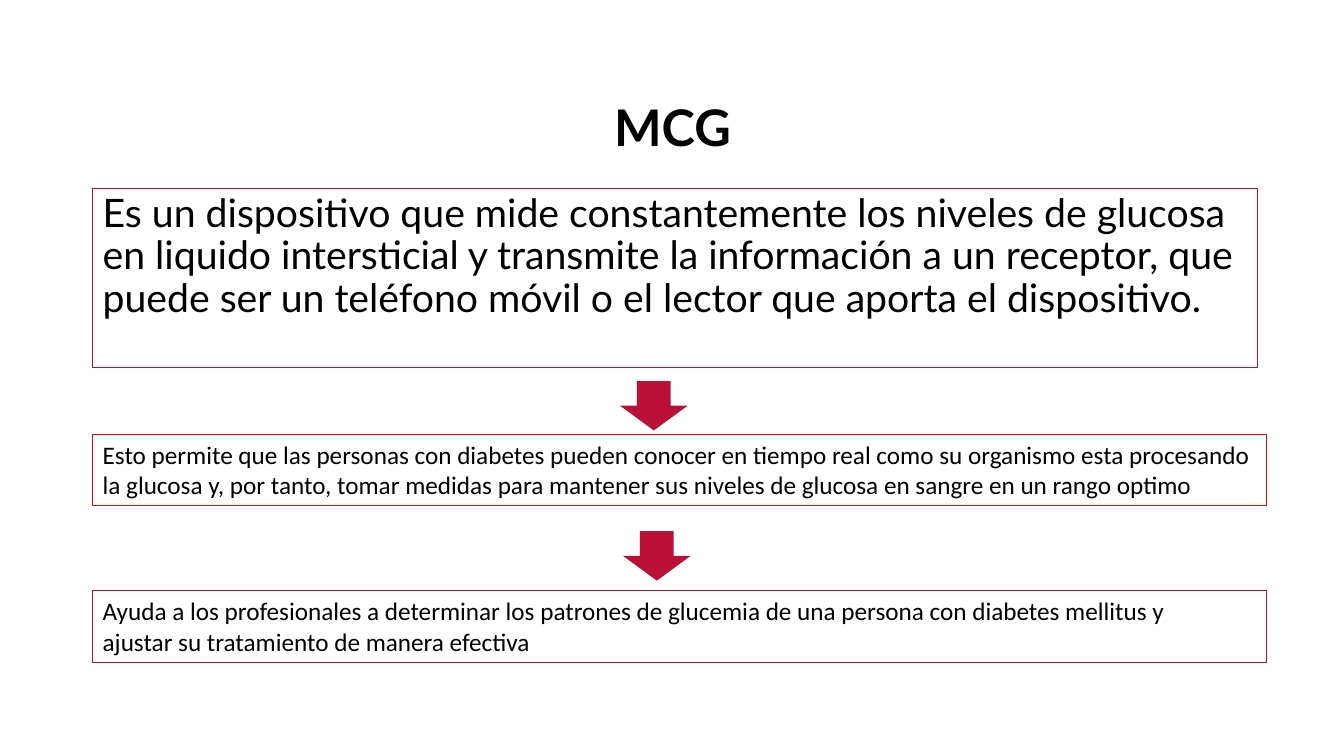
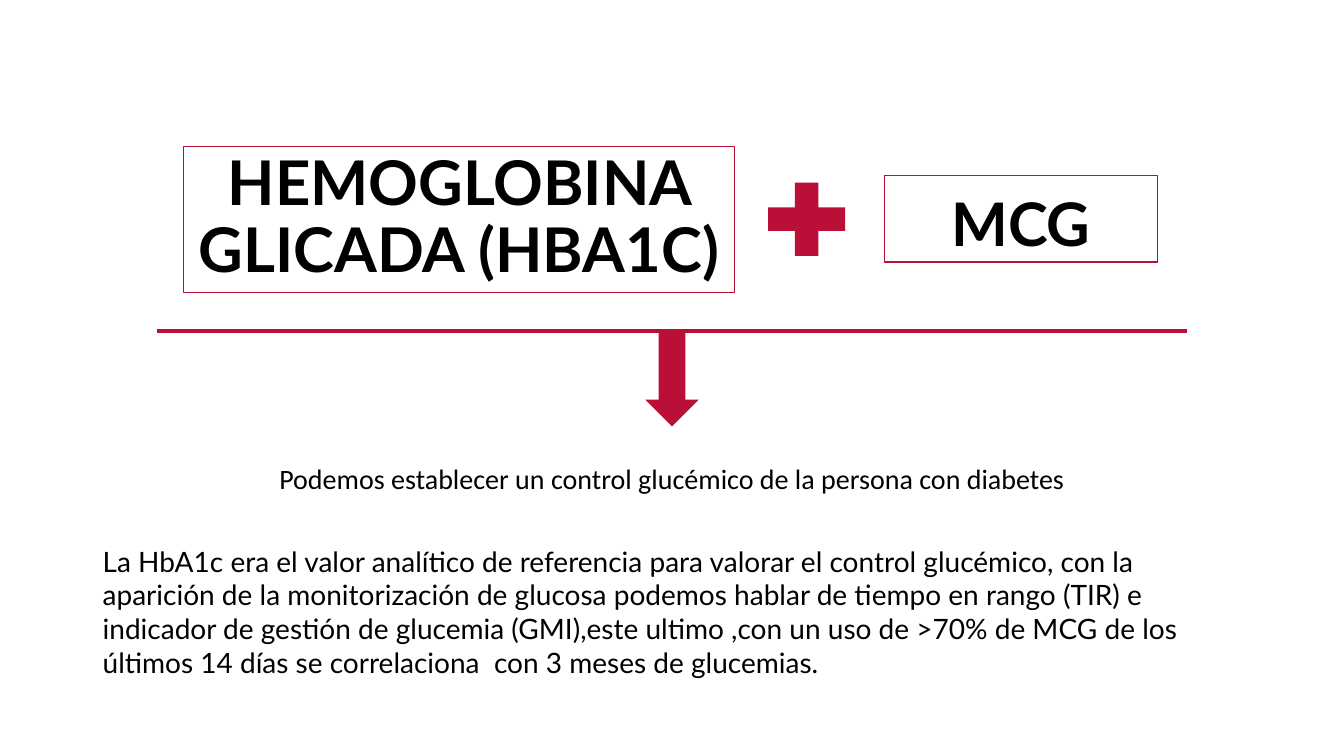
from pptx import Presentation
from pptx.dml.color import RGBColor
from pptx.enum.shapes import MSO_CONNECTOR as Conn, MSO_SHAPE as Shape
from pptx.enum.text import MSO_ANCHOR as Anchor, PP_ALIGN as Align
from pptx.oxml.ns import qn
from pptx.util import Inches, Pt
from lxml.etree import SubElement

CRIMSON = RGBColor(0xBA, 0x10, 0x37)
RED = RGBColor(0xFF, 0x00, 0x00)
BLACK = RGBColor(0, 0, 0)
HEAD, BODY = "Lato", "Calibri"
LEFT, WIDE, STEP = 0.92, 11.5, 11.64

# Places are left, top, width, height in inches.
DEVICE = ["Es un dispositivo que mide constantemente los niveles de glucosa en liquido "
          "intersticial y transmite la información a un receptor, que puede ser un teléfono "
          "móvil o el lector que aporta el dispositivo."]
STEPS = [
    (4.31, RED, ["Esto permite que las personas con diabetes pueden conocer en tiempo real "
                 "como su organismo esta procesando la glucosa y, por tanto, tomar medidas para "
                 "mantener sus niveles de glucosa en sangre en un rango optimo"]),
    (5.86, CRIMSON, ["Ayuda a los profesionales a determinar los patrones de glucemia de una "
                     "persona con diabetes mellitus y",
                     "ajustar su tratamiento de manera efectiva"]),
]
ARROWS = [(6.15, 3.78, 0.67, 0.49), (6.18, 5.27, 0.67, 0.49)]

TERMS = [
    ("HEMOGLOBINA GLICADA (HBA1C)", (1.82, 1.45, 5.47, 1.45), 44, 0.9),
    ("MCG", (8.77, 1.74, 2.71, 0.86), 42.9, 1.1),
]
SIGNS = [(Shape.MATH_PLUS, (7.48, 1.68, 1.04, 0.99)),
         (Shape.DOWN_ARROW, (6.4, 3.28, 0.53, 0.95))]
RULE = (1.56, 3.28, 11.77, 3.28)
RESULT = ["Podemos establecer un control glucémico de la persona con diabetes"]
DETAIL = ["La HbA1c era el valor analítico de referencia para valorar el control glucémico, "
          "con la aparición de la monitorización de glucosa podemos hablar de tiempo en rango "
          "(TIR) e indicador de gestión de glucemia (GMI),este ultimo ,con un uso de >70% de "
          "MCG de los últimos 14 días se correlaciona  con 3 meses de glucemias."]


def inch(place):
    return [Inches(n) for n in place]


def add_text(slide, place, lines, size, font=BODY, bold=False, center=False,
             middle=False, space=1.0, edge=None):
    """Add a text box, with an outline when an edge colour is given."""
    box = slide.shapes.add_textbox(*inch(place))
    if edge is not None:
        box.line.color.rgb = edge
        box.line.width = Pt(0.75)
    frame = box.text_frame
    frame.word_wrap = True
    frame.vertical_anchor = Anchor.MIDDLE if middle else Anchor.TOP
    frame.text = "\n".join(lines)
    for para in frame.paragraphs:
        para.alignment = Align.CENTER if center else Align.LEFT
        para.line_spacing = space
        for run in para.runs:
            run.font.name = font
            run.font.size = Pt(size)
            run.font.bold = bold
            run.font.color.rgb = BLACK


def add_title(slide, text, place, size=36, space=0.9, edge=None):
    add_text(slide, place, [text], size, HEAD, bold=True, center=True,
             middle=True, space=space, edge=edge)


def add_sign(slide, kind, place):
    sign = slide.shapes.add_shape(kind, *inch(place))
    sign.shadow.inherit = False
    sign.fill.solid()
    sign.fill.fore_color.rgb = CRIMSON
    sign.line.fill.background()


def add_rule(slide, ends):
    rule = slide.shapes.add_connector(Conn.STRAIGHT, *inch(ends))
    rule.line.color.rgb = CRIMSON
    rule.line.width = Pt(3)
    SubElement(rule._element.spPr, qn("a:effectLst"))


def build_device(slide):
    add_title(slide, "MCG", (LEFT, 0.93, WIDE, 0.72))
    add_text(slide, (LEFT, 1.87, 11.55, 1.78), DEVICE, 28, HEAD, space=0.9, edge=CRIMSON)
    for top, edge, lines in STEPS:
        add_text(slide, (LEFT, top, STEP, 0.71), lines, 18, edge=edge)
    for place in ARROWS:
        add_sign(slide, Shape.DOWN_ARROW, place)


def build_control(slide):
    for text, place, size, space in TERMS:
        add_title(slide, text, place, size, space, CRIMSON)
    add_text(slide, (LEFT, 5.35, WIDE, 1.85), DETAIL, 20, HEAD)
    add_text(slide, (1.62, 4.53, 10.09, 0.44), RESULT, 20, center=True)
    for kind, place in SIGNS:
        add_sign(slide, kind, place)
    add_rule(slide, RULE)


def main():
    deck = Presentation()
    deck.slide_width, deck.slide_height = Inches(13.33), Inches(7.5)
    for build in (build_device, build_control):
        build(deck.slides.add_slide(deck.slide_layouts[6]))
    deck.save("out.pptx")


if __name__ == "__main__":
    main()
